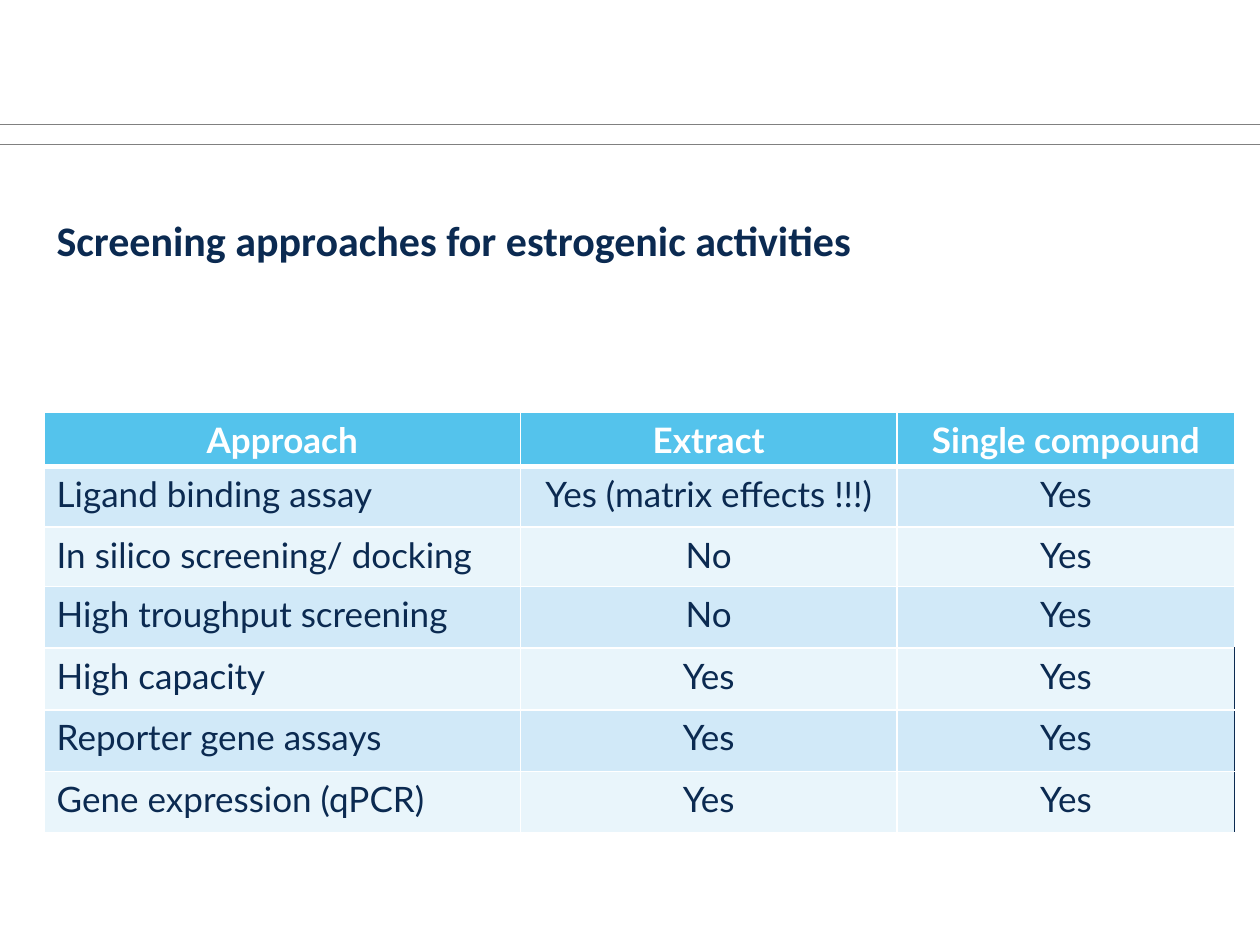
import pptx
import pptx.util
import pptx.dml.color
import pptx.enum.shapes
import pptx.enum.text
import pptx.oxml
import pptx.oxml.ns
from lxml import etree

Inches, Pt = pptx.util.Inches, pptx.util.Pt
RGBColor = pptx.dml.color.RGBColor
qn = pptx.oxml.ns.qn

NAVY = RGBColor(0x0B, 0x2A, 0x51)
WHITE = RGBColor(0xFF, 0xFF, 0xFF)
GREY = RGBColor(0x80, 0x80, 0x80)
HEADER_BLUE = RGBColor(0x54, 0xC3, 0xEC)
BANDS = (RGBColor(0xE9, 0xF5, 0xFB), RGBColor(0xD1, 0xE9, 0xF8))

ROWS = [
    ("Approach", "Extract", "Single compound"),
    ("Ligand binding assay", "Yes (matrix effects !!!)", "Yes"),
    ("In silico screening/ docking", "No", "Yes"),
    ("High troughput screening", "No", "Yes"),
    ("High capacity", "Yes", "Yes"),
    ("Reporter gene assays", "Yes", "Yes"),
    ("Gene expression (qPCR)", "Yes", "Yes"),
]
COL_WIDTHS = (3.78, 2.99, 2.68)
ROW_HEIGHTS = (0.31, 0.48, 0.47, 0.49, 0.49, 0.49, 0.49)
FIRST_NAVY_EDGE_ROW = 4


def set_font(p, name, size, color, bold):
    p.font.name = name
    p.font.size = Pt(size)
    p.font.color.rgb = color
    p.font.bold = bold


def add_rules(slide, left, width, tops):
    for top in tops:
        line = slide.shapes.add_connector(
            pptx.enum.shapes.MSO_CONNECTOR.STRAIGHT,
            Inches(left), Inches(top), Inches(left + width), Inches(top))
        line.line.color.rgb = GREY
        line.line.width = Pt(0.5)
        etree.SubElement(line._element.spPr, qn("a:effectLst"))


def add_title(slide, left, top, width, height):
    tf = slide.shapes.add_textbox(
        Inches(left), Inches(top), Inches(width), Inches(height)).text_frame
    tf.word_wrap = True
    tf.vertical_anchor = pptx.enum.text.MSO_ANCHOR.MIDDLE
    p = tf.paragraphs[0]
    p.text = "Screening approaches for estrogenic activities"
    set_font(p, "Calibri", 24, NAVY, True)


def set_borders(cell, right, bottom_width):
    tc_pr = cell._tc.get_or_add_tcPr()
    edges = (("L", WHITE, 1), ("R", right, 1), ("T", WHITE, 1),
             ("B", WHITE, bottom_width))
    # Border elements come before the cell fill
    for i, (side, color, width) in enumerate(edges):
        ln = etree.Element(qn(f"a:ln{side}"), w=str(Pt(width)))
        fill = etree.SubElement(ln, qn("a:solidFill"))
        etree.SubElement(fill, qn("a:srgbClr"), val=str(color))
        tc_pr.insert(i, ln)


def add_approach_table(slide, left, top, width, height):
    table = slide.shapes.add_table(
        len(ROWS), len(COL_WIDTHS), Inches(left), Inches(top),
        Inches(width), Inches(height)).table
    for col, w in zip(table.columns, COL_WIDTHS):
        col.width = Inches(w)
    for row, h in zip(table.rows, ROW_HEIGHTS):
        row.height = Inches(h)

    for r, texts in enumerate(ROWS):
        header = r == 0
        for c, text in enumerate(texts):
            cell = table.cell(r, c)
            cell.fill.solid()
            cell.fill.fore_color.rgb = HEADER_BLUE if header else BANDS[r % 2]
            p = cell.text_frame.paragraphs[0]
            p.text = text
            if header or c > 0:
                p.alignment = pptx.enum.text.PP_ALIGN.CENTER
            set_font(p, "Lato", 20, WHITE if header else NAVY, header)
            navy_edge = c == len(texts) - 1 and r >= FIRST_NAVY_EDGE_ROW
            set_borders(cell, NAVY if navy_edge else WHITE, 3 if header else 1)


def main():
    prs = pptx.Presentation()
    prs.slide_width, prs.slide_height = Inches(10), Inches(7.5)
    slide = prs.slides.add_slide(prs.slide_layouts[6])
    # Double rule, heading, comparison table
    add_rules(slide, 0, 10, (0.99, 1.15))
    add_title(slide, 0.35, 1.62, 8.11, 0.56)
    add_approach_table(slide, 0.35, 3.27, 9.45, 3.32)
    prs.save("out.pptx")


if __name__ == "__main__":
    main()
